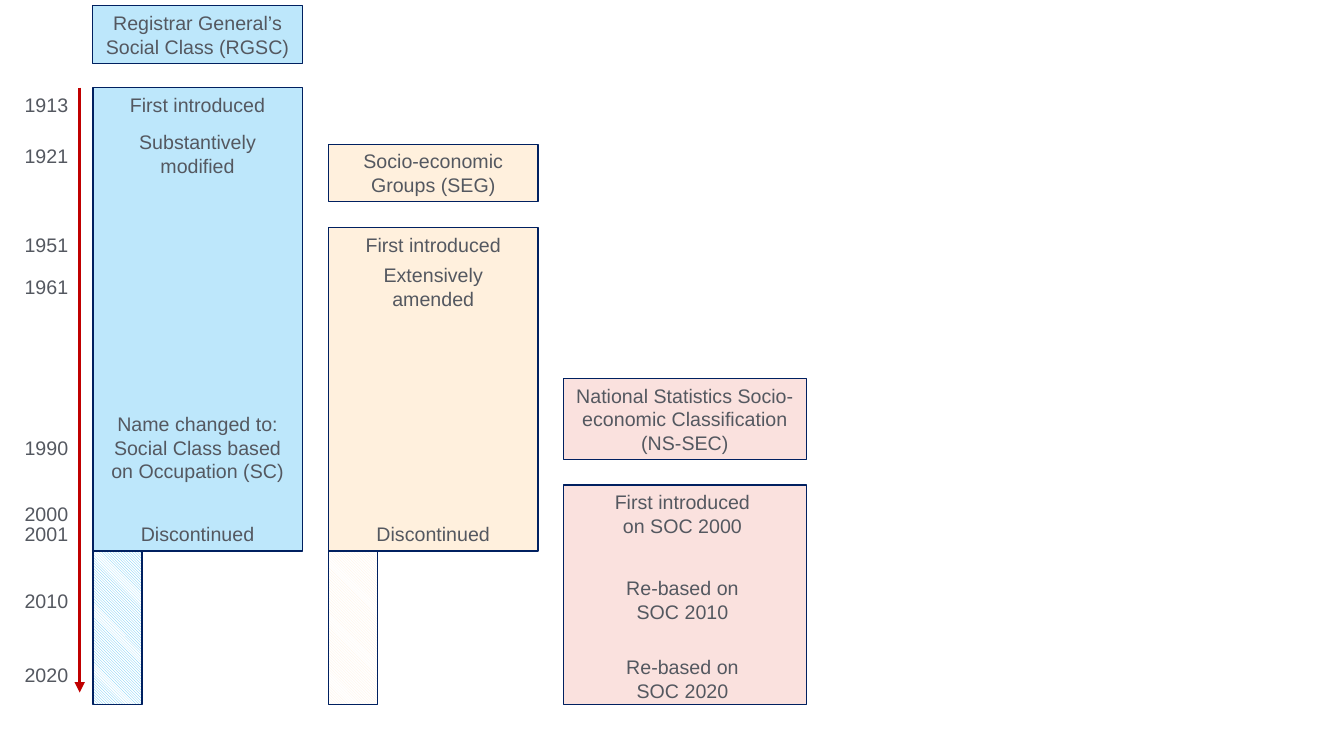
"""Build a timeline slide of the UK social classification schemes."""
from dataclasses import dataclass

from lxml import etree
from pptx import Presentation
from pptx import util as u
from pptx.dml.color import RGBColor
from pptx.enum import dml, shapes, text
from pptx.oxml import ns
from pptx.shapes.autoshape import Shape
from pptx.shapes.shapetree import GroupShapes, SlideShapes

GREY = RGBColor(0x54, 0x58, 0x60)
NAVY = RGBColor(0x00, 0x20, 0x60)
RED = RGBColor(0xC0, 0x00, 0x00)
WHITE = RGBColor(0xFF, 0xFF, 0xFF)
SKY = RGBColor(0xBD, 0xE7, 0xFB)
BLUE = RGBColor(0x5B, 0xC3, 0xF5)
CREAM = RGBColor(0xFF, 0xF0, 0xDD)
PINK = RGBColor(0xFA, 0xE1, 0xDE)

AXIS_X, AXIS_TOP, AXIS_END = 2.01, 2.21, 17.45
YEAR_WIDTH = 2.34
DISCONTINUED_TOP, DISCONTINUED_END = 13.03, 13.89
TIMELINE_END = 17.76
TAIL_WIDTH = 1.24
TEXT_HEIGHTS = {1: 0.86, 2: 1.45, 3: 2.06}

YEARS = {
    "1913": 2.21, "1921": 3.5, "1951": 5.74, "1961": 6.81, "1990": 10.87,
    "2000": 12.52, "2001": 13.03, "2010": 14.71, "2020": 16.59,
}


@dataclass(frozen=True)
class Event:
    """A milestone in the life of a scheme, in centimetres."""
    wording: str
    top: float
    lines: int = 1
    width: float = 4.32


@dataclass(frozen=True)
class Scheme:
    """A classification scheme drawn as one column, in centimetres."""
    title: str
    title_lines: int
    left: float
    width: float
    title_top: float
    start: float
    end: float
    events_centre: float
    colour: RGBColor
    events: tuple[Event, ...]
    tail_colour: RGBColor | None = None


DISCONTINUED = Event("Discontinued", DISCONTINUED_TOP, width=3.96)

SCHEMES = (
    Scheme("National Statistics Socio-economic Classification (NS-SEC)", 3,
           14.2, 6.12, 9.53, 12.22, TIMELINE_END, 17.2, PINK,
           (Event("First introduced on SOC 2000", 12.22, 2),
            Event("Re-based on SOC 2010", 14.4, 2),
            Event("Re-based on SOC 2020", 16.38, 2))),
    Scheme("Registrar General’s Social Class (RGSC)", 2,
           2.34, 5.28, 0.15, 2.21, DISCONTINUED_END, 4.98, SKY,
           (Event("First introduced", 2.21),
            Event("Substantively\nmodified", 3.15, 2, 3.66),
            Event("Name changed to: Social Class based on Occupation (SC)",
                  10.26, 3, 4.95),
            DISCONTINUED), BLUE),
    Scheme("Socio-economic Groups (SEG)", 2,
           8.28, 5.28, 3.63, 5.74, DISCONTINUED_END, 10.92, CREAM,
           (Event("First introduced", 5.74),
            Event("Extensively\namended", 6.5, 2, 3.66),
            DISCONTINUED), CREAM),
)


def write(frame: text.MSO_ANCHOR, wording: str) -> None:
    """Fill a text frame with centred grey paragraphs."""
    frame.word_wrap = True
    frame.auto_size = text.MSO_AUTO_SIZE.SHAPE_TO_FIT_TEXT
    for index, line in enumerate(wording.split("\n")):
        paragraph = frame.add_paragraph() if index else frame.paragraphs[0]
        paragraph.alignment = text.PP_ALIGN.CENTER
        run = paragraph.add_run()
        run.text = line
        run.font.name = "Arial"
        run.font.size = u.Pt(14)
        run.font.color.rgb = GREY


def add_label(parent: SlideShapes | GroupShapes, wording: str, centre: float,
              top: float, width: float, lines: int = 1) -> None:
    """Add a text label centred on a given position."""
    label = parent.add_textbox(u.Cm(centre - width / 2), u.Cm(top),
                               u.Cm(width), u.Cm(TEXT_HEIGHTS[lines]))
    write(label.text_frame, wording)


def add_block(parent: GroupShapes, left: float, top: float, width: float,
              height: float, colour: RGBColor, outline: float = 1) -> Shape:
    """Add a filled rectangle with a navy outline."""
    block = parent.add_shape(shapes.MSO_SHAPE.RECTANGLE, u.Cm(left),
                             u.Cm(top), u.Cm(width), u.Cm(height))
    block.shadow.inherit = False
    block.fill.solid()
    block.fill.fore_color.rgb = colour
    block.line.color.rgb = NAVY
    block.line.width = u.Pt(outline)
    return block


def add_axis(parent: SlideShapes) -> None:
    """Add the red time arrow and its years."""
    axis = parent.add_connector(shapes.MSO_CONNECTOR.STRAIGHT, u.Cm(AXIS_X),
                                u.Cm(AXIS_TOP), u.Cm(AXIS_X), u.Cm(AXIS_END))
    axis.line.color.rgb = RED
    axis.line.width = u.Pt(2.5)
    arrowhead = etree.SubElement(axis.line._get_or_add_ln(), ns.qn("a:tailEnd"))
    arrowhead.set("type", "triangle")
    etree.SubElement(axis._element.spPr, ns.qn("a:effectLst"))
    for year, top in YEARS.items():
        add_label(parent, year, YEAR_WIDTH / 2, top, YEAR_WIDTH)


def add_scheme(parent: SlideShapes, scheme: Scheme) -> None:
    """Add the title, lifespan, events and fading tail of a scheme."""
    column = parent.add_group_shape().shapes
    title = add_block(column, scheme.left, scheme.title_top, scheme.width,
                      TEXT_HEIGHTS[scheme.title_lines], scheme.colour, 0.75)
    write(title.text_frame, scheme.title)
    add_block(column, scheme.left, scheme.start, scheme.width,
              scheme.end - scheme.start, scheme.colour)
    for event in scheme.events:
        add_label(column, event.wording, scheme.events_centre, event.top,
                  event.width, event.lines)
    if scheme.tail_colour is not None:
        tail = add_block(column, scheme.left, scheme.end, TAIL_WIDTH,
                         TIMELINE_END - scheme.end, WHITE)
        tail.fill.patterned()
        tail.fill.pattern = dml.MSO_PATTERN.DARK_DOWNWARD_DIAGONAL
        tail.fill.fore_color.rgb = scheme.tail_colour
        tail.fill.back_color.rgb = WHITE


def main() -> None:
    """Build and save the slide."""
    deck = Presentation()
    deck.slide_width, deck.slide_height = u.Cm(33.87), u.Cm(19.05)
    timeline = deck.slides.add_slide(deck.slide_layouts[6])
    add_axis(timeline.shapes)
    for scheme in SCHEMES:
        add_scheme(timeline.shapes, scheme)
    deck.save("out.pptx")


if __name__ == "__main__":
    main()
